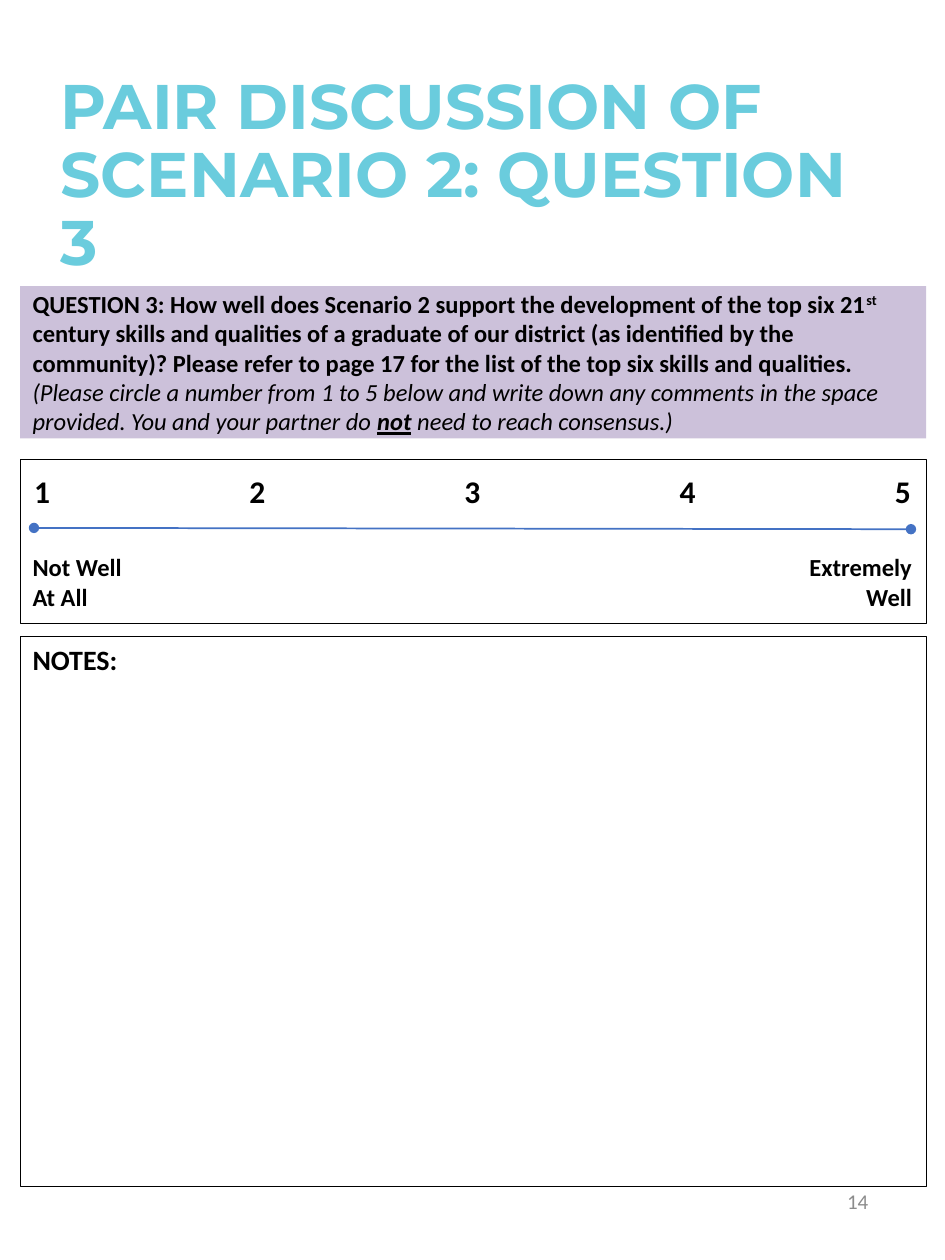
from dataclasses import dataclass
from lxml import etree
from pptx import Presentation
from pptx import util as u
from pptx.dml import color
from pptx.enum import shapes, text
from pptx.oxml import ns


@dataclass(frozen=True)
class Theme:
    body: str = "Calibri"
    head: str = "Montserrat"
    ink: str = "000000"
    aqua: str = "6ACCDD"
    lilac: str = "CCC1DA"
    blue: str = "4472C4"
    gray: str = "8C8C8C"
    title: int = 36
    mark: int = 18
    note: int = 16
    base: int = 14
    small: int = 12


T = Theme()
COLS, ROWS = 75, 100
WIDE, HIGH = u.Inches(7.5), u.Inches(10)
LEFT, SPAN = 1.6, 71.9
PAD = 1
ALIGN = text.PP_ALIGN
ANCHOR = text.MSO_ANCHOR


def col(n):
    return round(n * WIDE / COLS)


def row(n):
    return round(n * HIGH / ROWS)


def area(x, y, w, h):
    return col(x), row(y), col(w), row(h)


def rgb(code):
    return color.RGBColor.from_string(code)


def write(para, words, size=T.base, font=T.body, ink=T.ink, bold=False,
          slant=False, under=False, lift=0):
    run = para.add_run()
    run.text = words
    face = run.font
    face.size, face.name = u.Pt(size), font
    face.bold, face.italic, face.underline = bold, slant, under
    face.color.rgb = rgb(ink)
    if lift:
        run._r.get_or_add_rPr().set("baseline", str(lift * 1000))


def frame(shape, anchor=ANCHOR.MIDDLE, base=0.5):
    body = shape.text_frame
    body.word_wrap = True
    body.auto_size = text.MSO_AUTO_SIZE.NONE
    body.vertical_anchor = anchor
    body.margin_left = body.margin_right = col(PAD)
    body.margin_top, body.margin_bottom = row(0.5), row(base)
    para = body.paragraphs[0]
    para.alignment = ALIGN.LEFT
    return para


def panel(slide, y, h, fill=None):
    box = slide.shapes.add_shape(shapes.MSO_SHAPE.RECTANGLE, *area(LEFT, y, SPAN, h))
    box.shadow.inherit = False
    if fill:
        box.fill.solid()
        box.fill.fore_color.rgb = rgb(fill)
        box.line.fill.background()
    else:
        box.fill.background()
        box.line.color.rgb = rgb(T.ink)
        box.line.width = u.Pt(0.5)
    return box


def title(slide, words):
    head = slide.shapes.title
    head.left, head.top, head.width, head.height = area(3.8, 5.7, 67.5, 16.7)
    para = frame(head)
    para.line_spacing = 0.9
    write(para, words, size=T.title, font=T.head, ink=T.aqua, bold=True)


def scale(slide, marks):
    step = 17.08
    grid = slide.shapes.add_table(
        1, len(marks), *area(-5.2, 37.1, step * len(marks), 4.1)).table
    grid.first_row = grid.horz_banding = False
    for cell, mark in zip(grid.rows[0].cells, marks):
        cell.fill.background()
        para = cell.text_frame.paragraphs[0]
        para.alignment = ALIGN.CENTER
        write(para, mark, size=T.mark, bold=True)


def ask(slide):
    para = frame(panel(slide, 22.7, 12.1, T.lilac))
    para.space_after = u.Pt(6)
    write(para, "QUESTION 3: How well does Scenario 2 support the development "
          "of the top six 21", bold=True)
    write(para, "st", bold=True, lift=30)
    write(para, " century skills and qualities of a graduate of our district "
          "(as identified by the community)? Please refer to page 17 for the "
          "list of the top six skills and qualities. ", bold=True)
    write(para, "(Please circle a number from 1 to 5 below and write down any "
          "comments in the space provided. You and your partner do ", slant=True)
    write(para, "not", bold=True, slant=True, under=True)
    write(para, " need to reach consensus.)", slant=True)


def ends(slide, pairs):
    box = panel(slide, 36.5, 13)
    para = frame(box, ANCHOR.BOTTOM, PAD)
    for i, pair in enumerate(pairs):
        if i:
            para = box.text_frame.add_paragraph()
            para.alignment = ALIGN.LEFT
        tabs = etree.SubElement(para._p.get_or_add_pPr(), ns.qn("a:tabLst"))
        etree.SubElement(tabs, ns.qn("a:tab"),
                         pos=str(col(SPAN - 2 * PAD - 0.1)), algn="r")
        write(para, "\t".join(pair), bold=True)


def rule(slide):
    line = slide.shapes.add_connector(
        shapes.MSO_CONNECTOR.STRAIGHT, col(2.7), row(41.9), col(72.3), row(42))
    line.line.color.rgb = rgb(T.blue)
    line.line.width = u.Pt(1)
    pen = line.line._get_or_add_ln()
    for tip in ("a:headEnd", "a:tailEnd"):
        etree.SubElement(pen, ns.qn(tip), type="oval")
    etree.SubElement(line._element.spPr, ns.qn("a:effectLst"))


def notes(slide):
    para = frame(panel(slide, 50.5, 43.7), ANCHOR.TOP, PAD)
    para.space_after = u.Pt(6)
    write(para, "NOTES:", size=T.note, bold=True)


def folio(slide, words):
    para = frame(slide.shapes.add_textbox(*area(53, 92.7, 16.9, 5.3)))
    para.alignment = ALIGN.RIGHT
    write(para, words, size=T.small, ink=T.gray)


def main():
    deck = Presentation()
    deck.slide_width, deck.slide_height = WIDE, HIGH
    slide = deck.slides.add_slide(deck.slide_layouts[5])
    scale(slide, "12345")
    title(slide, "PAIR DISCUSSION OF SCENARIO 2: QUESTION 3")
    folio(slide, "14")
    ask(slide)
    ends(slide, [("Not Well", "Extremely"), ("At All", "Well")])
    rule(slide)
    notes(slide)
    deck.save("out.pptx")


if __name__ == "__main__":
    main()
